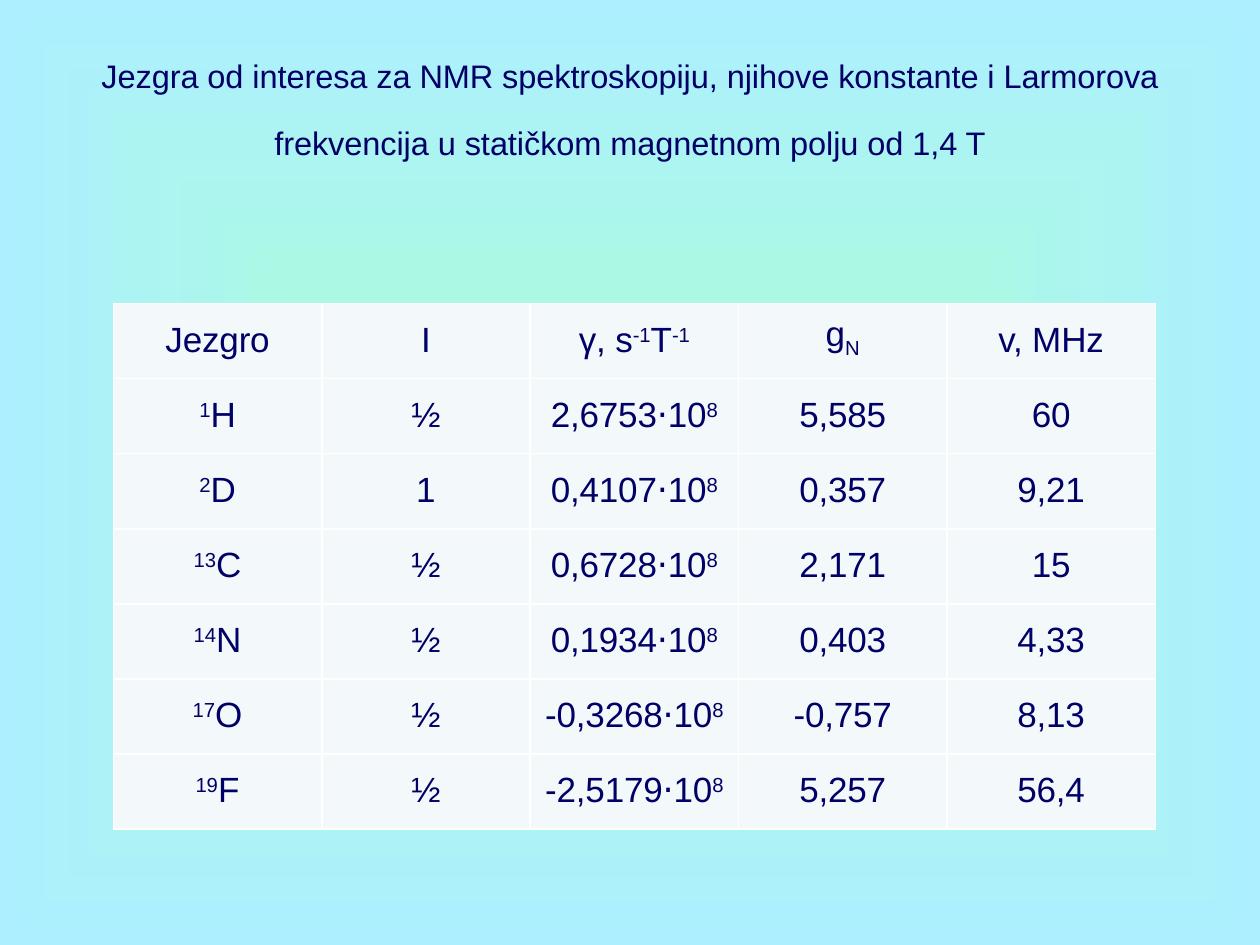
from lxml import etree
from pptx import Presentation
from pptx.dml.color import RGBColor
from pptx.enum.text import MSO_ANCHOR, PP_ALIGN
from pptx.oxml import parse_xml
from pptx.oxml.ns import nsdecls, qn
from pptx.util import Inches, Pt

CENTER = PP_ALIGN.CENTER
MIDDLE = MSO_ANCHOR.MIDDLE
TOP = MSO_ANCHOR.TOP
NORMAL, SUPER, SUB = 0, 30000, -25000
NAVY, PALE, WHITE = "000066", "F3F9FA", "FFFFFF"
GREEN, BLUE = "A9FFD4", "ADEFFF"


def color(value):
    return RGBColor.from_string(value)


def write(frame, pieces, size, line_spacing=None, letter_spacing=0, anchor=TOP):
    """Fill a text frame with (text, baseline) pieces as one centred paragraph."""
    frame.word_wrap = True
    frame.vertical_anchor = anchor
    paragraph = frame.paragraphs[0]
    paragraph.alignment = CENTER
    if line_spacing:
        paragraph.line_spacing = Pt(line_spacing)
    for text, baseline in pieces:
        run = paragraph.add_run()
        run.text = text
        run.font.name = "Arial"
        run.font.size = Pt(size)
        run.font.color.rgb = color(NAVY)
        properties = run.font._element
        if baseline:
            properties.set("baseline", str(baseline))
        if letter_spacing:
            properties.set("spc", str(letter_spacing))


presentation = Presentation()
presentation.slide_width = Inches(10)
presentation.slide_height = Inches(7.5)
slide = presentation.slides.add_slide(presentation.slide_layouts[6])

# Background: gradient from the centre to the edges
background = parse_xml(
    f'<p:bg {nsdecls("p", "a")}><p:bgPr><a:gradFill rotWithShape="0"><a:gsLst>'
    f'<a:gs pos="0"><a:srgbClr val="{GREEN}"/></a:gs>'
    f'<a:gs pos="100000"><a:srgbClr val="{BLUE}"/></a:gs></a:gsLst>'
    '<a:path path="shape"><a:fillToRect l="50000" t="50000" r="50000" b="50000"/></a:path>'
    '</a:gradFill><a:effectLst/></p:bgPr></p:bg>'
)
slide.element.cSld.insert(0, background)

# Title
title = slide.shapes.add_textbox(Inches(0.5), Inches(0.3), Inches(9), Inches(1.25))
title_text = (
    "Jezgra od interesa za NMR spektroskopiju, njihove konstante i Larmorova "
    "frekvencija u statičkom magnetnom polju od 1,4 T"
)
write(title.text_frame, [(title_text, SUPER)], size=32, anchor=MIDDLE)

# Table content: mass number, symbol, spin, gyromagnetic ratio, g factor, frequency
nuclei = [
    ("1", "H", "½", "2,6753", "5,585", "60"),
    ("2", "D", "1", "0,4107", "0,357", "9,21"),
    ("13", "C", "½", "0,6728", "2,171", "15"),
    ("14", "N", "½", "0,1934", "0,403", "4,33"),
    ("17", "O", "½", "-0,3268", "-0,757", "8,13"),
    ("19", "F", "½", "-2,5179", "5,257", "56,4"),
]
rows = [[
    [("Jezgro", NORMAL)],
    [("I", NORMAL)],
    [("γ, s", NORMAL), ("-1", SUPER), ("T", NORMAL), ("-1", SUPER)],
    [("g", NORMAL), ("N", SUB)],
    [("v, MHz", NORMAL)],
]]
for mass, symbol, spin, ratio, factor, frequency in nuclei:
    rows.append([
        [(mass, SUPER), (symbol, NORMAL)],
        [(spin, NORMAL)],
        [(ratio + "⋅10", NORMAL), ("8", SUPER)],
        [(factor, NORMAL)],
        [(frequency, NORMAL)],
    ])

# Table with equal columns and rows
table = slide.shapes.add_table(
    len(rows), len(rows[0]), Inches(0.9), Inches(2.41), Inches(8.27), Inches(4.17)
).table
table.first_row = False
table.horz_banding = False
for row_index, row in enumerate(rows):
    for column_index, pieces in enumerate(row):
        cell = table.cell(row_index, column_index)
        cell.margin_left = cell.margin_right = Inches(0.08)
        cell.margin_top = Inches(0.28)
        cell.margin_bottom = 0
        write(cell.text_frame, pieces, size=20, line_spacing=12, letter_spacing=-10)
        cell.vertical_anchor = TOP

        # White borders come before the fill in the cell properties
        cell_properties = cell._tc.get_or_add_tcPr()
        for side in ("a:lnL", "a:lnR", "a:lnT", "a:lnB"):
            border = etree.SubElement(cell_properties, qn(side), w=str(Pt(1)))
            border_fill = etree.SubElement(border, qn("a:solidFill"))
            etree.SubElement(border_fill, qn("a:srgbClr"), val=WHITE)
        cell.fill.solid()
        cell.fill.fore_color.rgb = color(PALE)

presentation.save("out.pptx")
